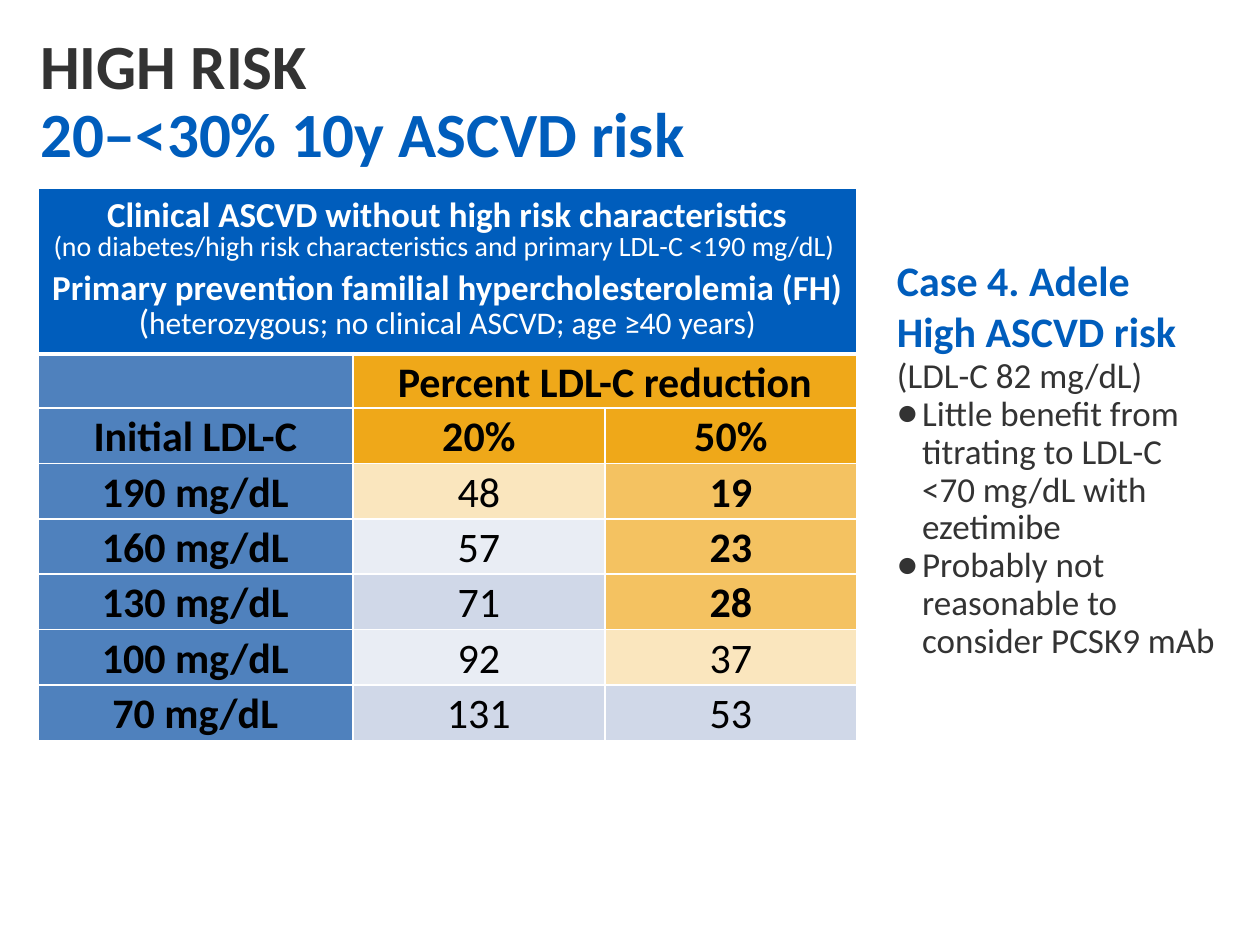
from lxml import etree
from pptx import Presentation
from pptx.dml.color import RGBColor
from pptx.enum.shapes import MSO_SHAPE
from pptx.enum.text import MSO_ANCHOR, PP_ALIGN
from pptx.oxml.ns import qn
from pptx.util import Inches, Pt

RECTANGLE = MSO_SHAPE.RECTANGLE
MIDDLE = MSO_ANCHOR.MIDDLE
LEFT, CENTER = PP_ALIGN.LEFT, PP_ALIGN.CENTER

COLORS = {
    "white": "FFFFFF", "black": "000000", "gray": "333333", "blue": "005DBC",
    "label": "4F81BD", "orange": "EFA819", "amber": "F4C261",
    "cream": "FAE6BE", "pale": "E9EDF4", "mist": "D0D8E8",
}


class SlideBuilder:
    """Holds the font, the colours and the current page."""

    font = "Calibri"

    def __init__(self, page):
        self.page = page

    def color(self, name):
        return RGBColor.from_string(COLORS[name])

    def paint(self, target, name):
        target.fill.solid()
        target.fill.fore_color.rgb = self.color(name)

    def add_paragraphs(self, frame, paras, align=LEFT, spacing=0.9):
        """Each para is (spans, options); each span is (text, size, color, bold)."""
        for index, (spans, options) in enumerate(paras):
            para = frame.paragraphs[0] if index == 0 else frame.add_paragraph()
            para.alignment = align
            para.line_spacing = spacing
            if "before" in options:
                para.space_before = Pt(options["before"])
            if "bullet" in options:
                self.bullet(para, options["bullet"])
            for number, (text, size, color, bold) in enumerate(spans):
                if number and options.get("break_lines"):
                    para.add_line_break()
                span = para.add_run()
                span.text = text
                span.font.name = self.font
                span.font.size = Pt(size)
                span.font.bold = bold
                span.font.color.rgb = self.color(color)

    def bullet(self, para, char, indent=0.2):
        properties = para._p.get_or_add_pPr()
        properties.set("marL", str(Inches(indent)))
        properties.set("indent", str(-Inches(indent)))
        etree.SubElement(properties, qn("a:buFont"), typeface=self.font)
        etree.SubElement(properties, qn("a:buChar"), char=char)

    def fill_box(self, box, paras):
        box.text_frame.word_wrap = True
        box.text_frame.vertical_anchor = MIDDLE
        self.add_paragraphs(box.text_frame, paras)

    def text(self, left, top, width, height, paras):
        box = self.page.shapes.add_textbox(
            Inches(left), Inches(top), Inches(width), Inches(height))
        self.fill_box(box, paras)

    def panel(self, left, top, width, height, fill, paras):
        box = self.page.shapes.add_shape(
            RECTANGLE, Inches(left), Inches(top), Inches(width), Inches(height))
        box.shadow.inherit = False
        box.line.fill.background()
        self.paint(box, fill)
        self.fill_box(box, paras)

    def table(self, left, top, widths, heights):
        frame = self.page.shapes.add_table(
            len(heights), len(widths), Inches(left), Inches(top),
            Inches(sum(widths)), Inches(sum(heights)))
        grid = frame.table
        for column, width in zip(grid.columns, widths):
            column.width = Inches(width)
        for row, height in zip(grid.rows, heights):
            row.height = Inches(height)
        return grid

    def cell(self, cell, fill, paras, margins=(0.06, 0), spacing=1.07, **borders):
        """Borders are widths in points by side (L, R, T, B), 1 unless given."""
        cell.margin_left = cell.margin_right = Inches(margins[0])
        cell.margin_top = cell.margin_bottom = Inches(margins[1])
        cell.vertical_anchor = MIDDLE
        properties = cell._tc.get_or_add_tcPr()
        for side in "LRTB":
            line = etree.SubElement(
                properties, qn(f"a:ln{side}"), w=str(Pt(borders.get(side, 1))))
            solid = etree.SubElement(line, qn("a:solidFill"))
            etree.SubElement(solid, qn("a:srgbClr"), val=COLORS["white"])
        self.paint(cell, fill)
        self.add_paragraphs(cell.text_frame, paras, CENTER, spacing)


TITLE = [([("HIGH RISK", 36, "gray", True),
           ("20‒<30% 10y ASCVD risk", 36, "blue", True)], {"break_lines": True})]

POPULATION = [
    ([("Clinical ASCVD without high risk characteristics", 20, "white", True)], {}),
    ([("(no diabetes/high risk characteristics and primary LDL-C <190 mg/dL) ",
       16, "white", False)], {}),
    ([("Primary prevention familial hypercholesterolemia (FH)", 20, "white", True)],
     {"before": 6}),
    ([("(", 20, "white", False),
      ("heterozygous; no clinical ASCVD; age ≥40 years)", 18, "white", False)], {}),
]

# Each cell: text, fill, bold
REDUCTION_ROWS = [
    [("", "label", True), ("Percent LDL-C reduction", "orange", True),
     ("", "orange", True)],
    [("Initial LDL-C", "label", True), ("20%", "orange", True), ("50%", "orange", True)],
    [("190 mg/dL", "label", True), ("48", "cream", False), ("19", "amber", True)],
    [("160 mg/dL", "label", True), ("57", "pale", False), ("23", "amber", True)],
    [("130 mg/dL", "label", True), ("71", "mist", False), ("28", "amber", True)],
    [("100 mg/dL", "label", True), ("92", "pale", False), ("37", "cream", False)],
    [("70 mg/dL", "label", True), ("131", "mist", False), ("53", "mist", False)],
]

CASE = [
    ([("Case 4. Adele", 24, "blue", True)], {}),
    ([("High ASCVD risk", 24, "blue", True), (" ", 28, "blue", True)], {}),
    ([("(LDL-C 82 mg/dL)", 20, "gray", False)], {}),
    ([("Little benefit from titrating to LDL-C <70 mg/dL with ezetimibe",
       20, "gray", False)], {"bullet": "●"}),
    ([("Probably not reasonable to consider PCSK9 mAb", 20, "gray", False)],
     {"bullet": "●"}),
]


def add_reduction_table(builder):
    grid = builder.table(0.3, 1.49, [2.5, 2, 2], [1.32, 0.42] + [0.44] * 6)
    for column in range(3):
        builder.cell(grid.cell(0, column), "blue", POPULATION if column == 0 else [],
                     margins=(0.1, 0.1), spacing=0.8, B=3)
    for row, values in enumerate(REDUCTION_ROWS, start=1):
        for column, (text, fill, bold) in enumerate(values):
            paras = [([(text, 24, "black", bold)], {})] if text else []
            builder.cell(grid.cell(row, column), fill, paras, T=3 if row == 1 else 1)
    grid.cell(0, 0).merge(grid.cell(0, 2))
    grid.cell(1, 1).merge(grid.cell(1, 2))


def main():
    deck = Presentation()
    deck.slide_width, deck.slide_height = Inches(10), Inches(7.5)
    builder = SlideBuilder(deck.slides.add_slide(deck.slide_layouts[6]))
    builder.text(0.22, 0.19, 9.58, 1.25, TITLE)
    add_reduction_table(builder)
    builder.panel(7.02, 2, 2.78, 3.31, "white", CASE)
    deck.save("out.pptx")


if __name__ == "__main__":
    main()
